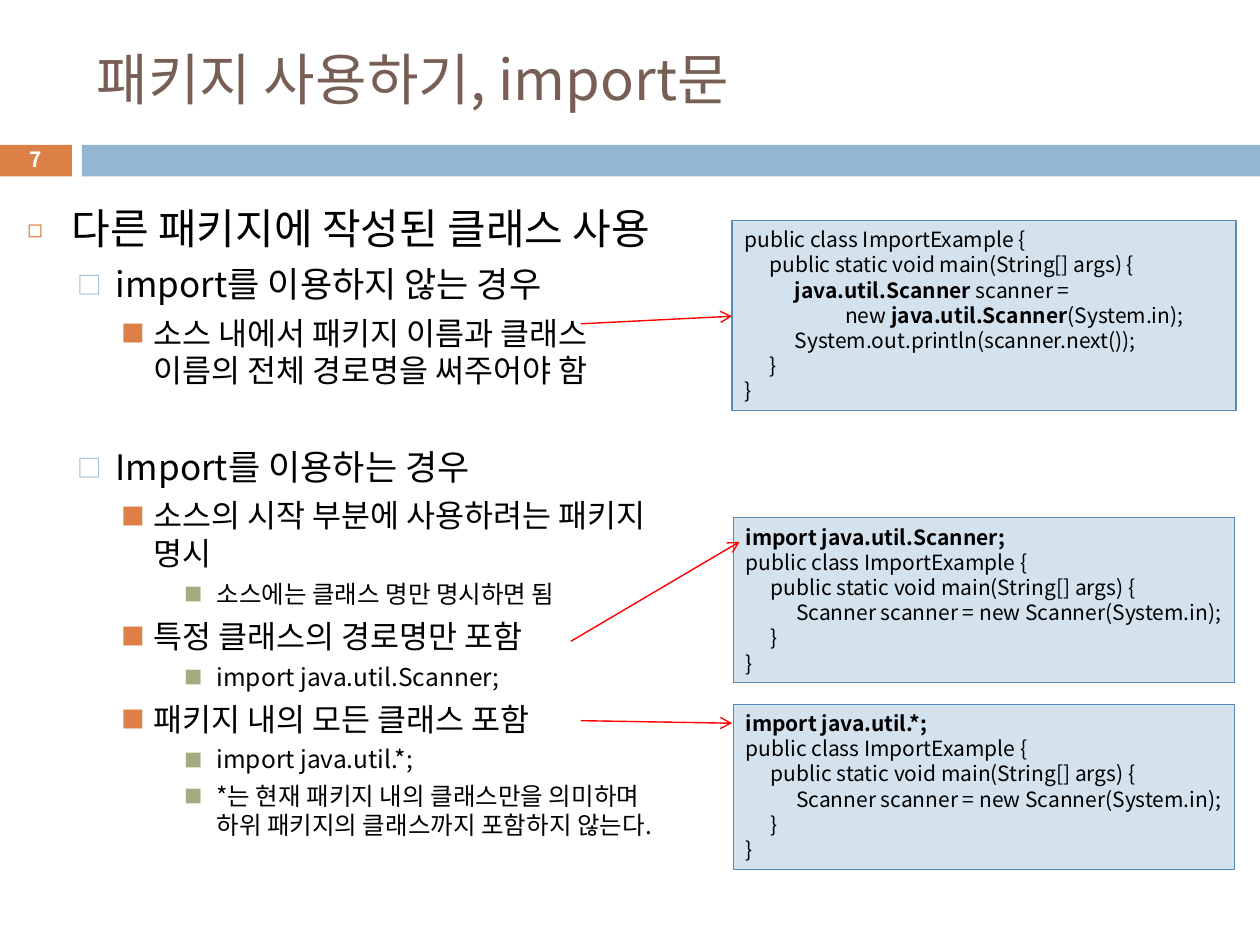
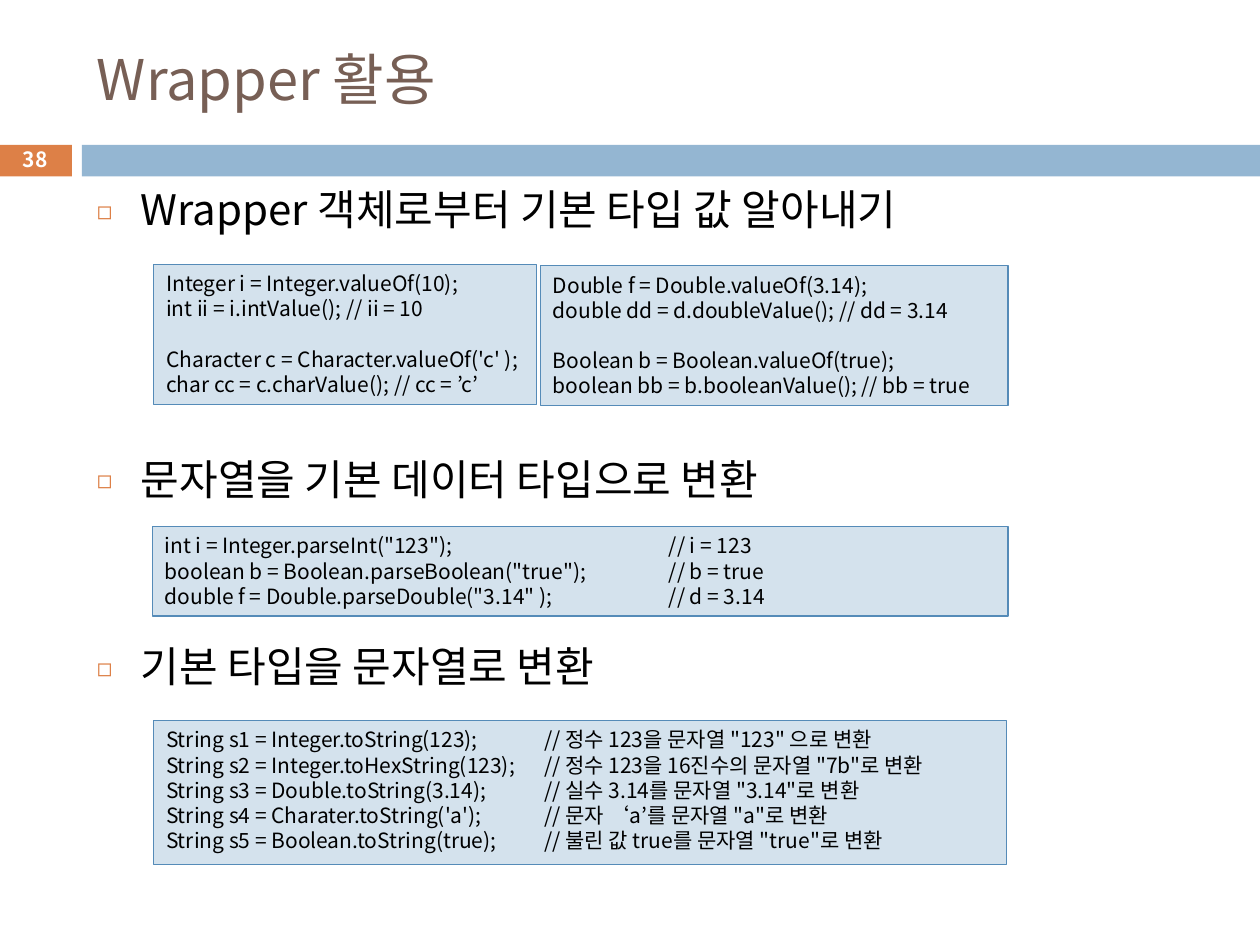
from dataclasses import dataclass
from typing import NamedTuple

from lxml import etree
from pptx import Presentation
from pptx import util as u
from pptx.dml.color import RGBColor
from pptx.enum import shapes, text
from pptx.oxml import ns

SLIDE_WIDTH, SLIDE_HEIGHT = u.Inches(10), u.Inches(7.5)
COLUMN, ROW = SLIDE_WIDTH / 100, SLIDE_HEIGHT / 75


@dataclass(frozen=True)
class Theme:
    font: str = "Noto Sans CJK KR"
    detail_font: str = "Arial"
    ink: str = "000000"
    title: str = "775F55"
    orange: str = "DD8047"
    blue: str = "94B6D2"
    green: str = "A5AB81"
    white: str = "FFFFFF"
    code_fill: str = "D4E2ED"
    code_border: str = "558BB8"
    arrow: str = "FF0000"
    title_size: float = 32
    number_size: float = 12
    code_size: float = 12
    border_width: float = 0.75
    arrow_width: float = 0.8
    line_height: float = 1.2


THEME = Theme()


class Area(NamedTuple):
    """A rectangle in grid columns and rows."""
    column: float
    row: float
    columns: float
    rows: float

    def lengths(self) -> tuple[int, int, int, int]:
        return (round(self.column * COLUMN), round(self.row * ROW),
                round(self.columns * COLUMN), round(self.rows * ROW))


class Level(NamedTuple):
    size: float
    space_before: float
    margin: float
    hanging: float
    bullet: str
    bullet_color: str
    bullet_percent: int
    font: str = THEME.font

    def blank_height(self) -> float:
        return self.size * THEME.line_height + self.space_before


LEVELS = (
    Level(24, 7, 3.5, 3.5, "◻", THEME.orange, 60),
    Level(20, 5.5, 7, 3, "□", THEME.blue, 70),
    Level(18, 5, 10, 2.5, "■", THEME.orange, 75, THEME.detail_font),
    Level(14, 4, 15, 2.5, "■", THEME.green, 75),
)


class Point(NamedTuple):
    level: int
    words: str
    gap: float = 0


class CodeBox(NamedTuple):
    """Code lines: "|" toggles bold and an empty line becomes spacing."""
    area: Area
    code: str
    tab_columns: float


class Arrow(NamedTuple):
    start: tuple[float, float]
    end: tuple[float, float]


class Page(NamedTuple):
    number: int
    title: str
    body: Area
    points: tuple[Point, ...]
    boxes: tuple[CodeBox, ...]
    arrows: tuple[Arrow, ...] = ()


TITLE_AREA = Area(6.7, 2.5, 89.2, 7.4)
NUMBER_BAND = Area(-0.1, 11.5, 5.8, 2.5)
TITLE_BAND = Area(6.5, 11.5, 93.5, 2.5)
NUMBER_AREA = Area(-0.1, 11.3, 5.8, 2.7)
CODE_TAB = 2
COMMENT_TAB = 10

SHORT_EXAMPLE = """public class ImportExample {
\tpublic static void main(String[] args) {
\t\tScanner scanner = new Scanner(System.in);
\t}
}"""

PAGES = (
    Page(
        7, "패키지 사용하기, import문", Area(1.2, 15.6, 53.4, 51.2),
        (
            Point(0, "다른 패키지에 작성된 클래스 사용"),
            Point(1, "import를 이용하지 않는 경우"),
            Point(2, "소스 내에서 패키지 이름과 클래스 이름의 전체 경로명을 써주어야 함"),
            Point(1, "Import를 이용하는 경우", LEVELS[2].blank_height()),
            Point(2, "소스의 시작 부분에 사용하려는 패키지 명시"),
            Point(3, "소스에는 클래스 명만 명시하면 됨"),
            Point(2, "특정 클래스의 경로명만 포함"),
            Point(3, "import java.util.Scanner;"),
            Point(2, "패키지 내의 모든 클래스 포함"),
            Point(3, "import java.util.*;"),
            Point(3, "*는 현재 패키지 내의 클래스만을 의미하며 하위 패키지의 클래스까지 포함하지 않는다."),
        ),
        (
            CodeBox(Area(58.1, 17.5, 40, 15.1), """public class ImportExample {
\tpublic static void main(String[] args) {
\t\t|java.util.Scanner| scanner =
\t\t\t\tnew |java.util.Scanner|(System.in);
\t\tSystem.out.println(scanner.next());
\t}
}""", CODE_TAB),
            CodeBox(Area(58.2, 41.1, 39.8, 13.1),
                    "|import java.util.Scanner;|\n" + SHORT_EXAMPLE, CODE_TAB),
            CodeBox(Area(58.2, 55.9, 39.8, 13.1),
                    "|import java.util.*;|\n" + SHORT_EXAMPLE, CODE_TAB),
        ),
        (
            Arrow((46.1, 25.7), (58.1, 25.1)),
            Arrow((45.3, 50.9), (58.7, 43)),
            Arrow((46.1, 57.2), (58.1, 57.4)),
        ),
    ),
    Page(
        38, "Wrapper 활용", Area(6.7, 14.1, 89.2, 60.9),
        (
            Point(0, "Wrapper 객체로부터 기본 타입 값 알아내기"),
            Point(0, "문자열을 기본 데이터 타입으로 변환", 4 * LEVELS[1].blank_height()),
            Point(0, "기본 타입을 문자열로 변환", 2 * LEVELS[0].blank_height()),
        ),
        (
            CodeBox(Area(12.2, 21, 30.4, 11.1), """Integer i = Integer.valueOf(10);
int ii = i.intValue(); // ii = 10

Character c = Character.valueOf('c' );
char cc = c.charValue(); // cc = ’c’""", COMMENT_TAB),
            CodeBox(Area(12.1, 41.8, 67.9, 7.1), """int i = Integer.parseInt("123"); \t\t// i = 123
boolean b = Boolean.parseBoolean("true"); \t// b = true
double f = Double.parseDouble("3.14" ); \t// d = 3.14""", COMMENT_TAB),
            CodeBox(Area(12.2, 57.2, 67.7, 11.4),
                    """String s1 = Integer.toString(123); \t// 정수 123을 문자열 "123" 으로 변환
String s2 = Integer.toHexString(123); \t// 정수 123을 16진수의 문자열 "7b"로 변환
String s3 = Double.toString(3.14); \t// 실수 3.14를 문자열 "3.14"로 변환
String s4 = Charater.toString('a'); \t// 문자 ‘a’를 문자열 "a"로 변환
String s5 = Boolean.toString(true); \t// 불린 값 true를 문자열 "true"로 변환""", COMMENT_TAB),
            CodeBox(Area(42.9, 21.1, 37.1, 11.1), """Double f = Double.valueOf(3.14);
double dd = d.doubleValue(); // dd = 3.14

Boolean b = Boolean.valueOf(true);
boolean bb = b.booleanValue(); // bb = true""", COMMENT_TAB),
        ),
    ),
)


def add_element(parent, tag: str, **attributes):
    values = {name: str(value) for name, value in attributes.items()}
    return etree.SubElement(parent, ns.qn(tag), values)


def format_run(run, size: float, color: str, bold: bool = False, font: str = THEME.font) -> None:
    run.font.size = u.Pt(size)
    run.font.bold = bold
    run.font.color.rgb = RGBColor.from_string(color)
    run.font.name = font
    add_element(run.font._element, "a:ea", typeface=THEME.font)


def space_lines(paragraph, size: float, before: float = 0) -> None:
    paragraph.line_spacing = u.Pt(size * THEME.line_height)
    paragraph.space_before = u.Pt(before)


def next_paragraph(frame, index: int):
    return frame.add_paragraph() if index else frame.paragraphs[0]


def add_text_box(slide, area: Area, anchor=text.MSO_ANCHOR.TOP):
    frame = slide.shapes.add_textbox(*area.lengths()).text_frame
    frame.word_wrap = True
    frame.vertical_anchor = anchor
    return frame


def add_label(slide, area: Area, words: str, size: float, color: str,
              bold: bool = False, alignment=text.PP_ALIGN.LEFT) -> None:
    frame = add_text_box(slide, area, text.MSO_ANCHOR.MIDDLE)
    frame.text = words
    paragraph = frame.paragraphs[0]
    paragraph.alignment = alignment
    space_lines(paragraph, size)
    format_run(paragraph.runs[0], size, color, bold)


def add_rectangle(slide, area: Area, fill: str, border: str | None = None):
    shape = slide.shapes.add_shape(shapes.MSO_SHAPE.RECTANGLE, *area.lengths())
    shape.shadow.inherit = False
    shape.fill.solid()
    shape.fill.fore_color.rgb = RGBColor.from_string(fill)
    if border:
        shape.line.color.rgb = RGBColor.from_string(border)
        shape.line.width = u.Pt(THEME.border_width)
    else:
        shape.line.fill.background()
    return shape


def add_points(slide, area: Area, points: tuple[Point, ...]) -> None:
    frame = add_text_box(slide, area)
    for index, point in enumerate(points):
        level = LEVELS[point.level]
        paragraph = next_paragraph(frame, index)
        paragraph.text = point.words
        paragraph.level = point.level
        space_lines(paragraph, level.size, level.space_before + point.gap)
        format_run(paragraph.runs[0], level.size, THEME.ink, font=level.font)
        properties = paragraph._p.get_or_add_pPr()
        properties.set("marL", str(round(level.margin * COLUMN)))
        properties.set("indent", str(round(-level.hanging * COLUMN)))
        add_element(add_element(properties, "a:buClr"), "a:srgbClr", val=level.bullet_color)
        add_element(properties, "a:buSzPct", val=level.bullet_percent * 1000)
        add_element(properties, "a:buFont", typeface=THEME.font)
        add_element(properties, "a:buChar", char=level.bullet)


def add_code_box(slide, box: CodeBox) -> None:
    frame = add_rectangle(slide, box.area, THEME.code_fill, THEME.code_border).text_frame
    frame.word_wrap = True
    frame.vertical_anchor = text.MSO_ANCHOR.TOP
    gap = 0.0
    for index, line in enumerate(box.code.split("\n")):
        if not line:
            gap = THEME.code_size * THEME.line_height
            continue
        paragraph = next_paragraph(frame, index)
        paragraph.alignment = text.PP_ALIGN.LEFT
        space_lines(paragraph, THEME.code_size, gap)
        gap = 0.0
        tabs = add_element(paragraph._p.get_or_add_pPr(), "a:tabLst")
        for stop in range(1, 5):
            add_element(tabs, "a:tab", pos=round(stop * box.tab_columns * COLUMN), algn="l")
        for part, words in enumerate(line.split("|")):
            if words:
                run = paragraph.add_run()
                run.text = words
                format_run(run, THEME.code_size, THEME.ink, bold=part % 2 == 1)


def add_arrow(slide, arrow: Arrow) -> None:
    ends = [round(value * unit) for point in arrow for value, unit in zip(point, (COLUMN, ROW))]
    connector = slide.shapes.add_connector(shapes.MSO_CONNECTOR.STRAIGHT, *ends)
    connector.line.color.rgb = RGBColor.from_string(THEME.arrow)
    connector.line.width = u.Pt(THEME.arrow_width)
    add_element(connector.line._get_or_add_ln(), "a:tailEnd", type="arrow")
    add_element(connector._element.spPr, "a:effectLst")


def add_page(presentation, page: Page) -> None:
    slide = presentation.slides.add_slide(presentation.slide_layouts[6])
    add_rectangle(slide, NUMBER_BAND, THEME.orange)
    add_rectangle(slide, TITLE_BAND, THEME.blue)
    add_label(slide, TITLE_AREA, page.title, THEME.title_size, THEME.title)
    add_points(slide, page.body, page.points)
    for box in page.boxes:
        add_code_box(slide, box)
    add_label(slide, NUMBER_AREA, str(page.number), THEME.number_size, THEME.white,
              bold=True, alignment=text.PP_ALIGN.CENTER)
    for arrow in page.arrows:
        add_arrow(slide, arrow)


def main() -> None:
    presentation = Presentation()
    presentation.slide_width, presentation.slide_height = SLIDE_WIDTH, SLIDE_HEIGHT
    for page in PAGES:
        add_page(presentation, page)
    presentation.save("out.pptx")


if __name__ == "__main__":
    main()
